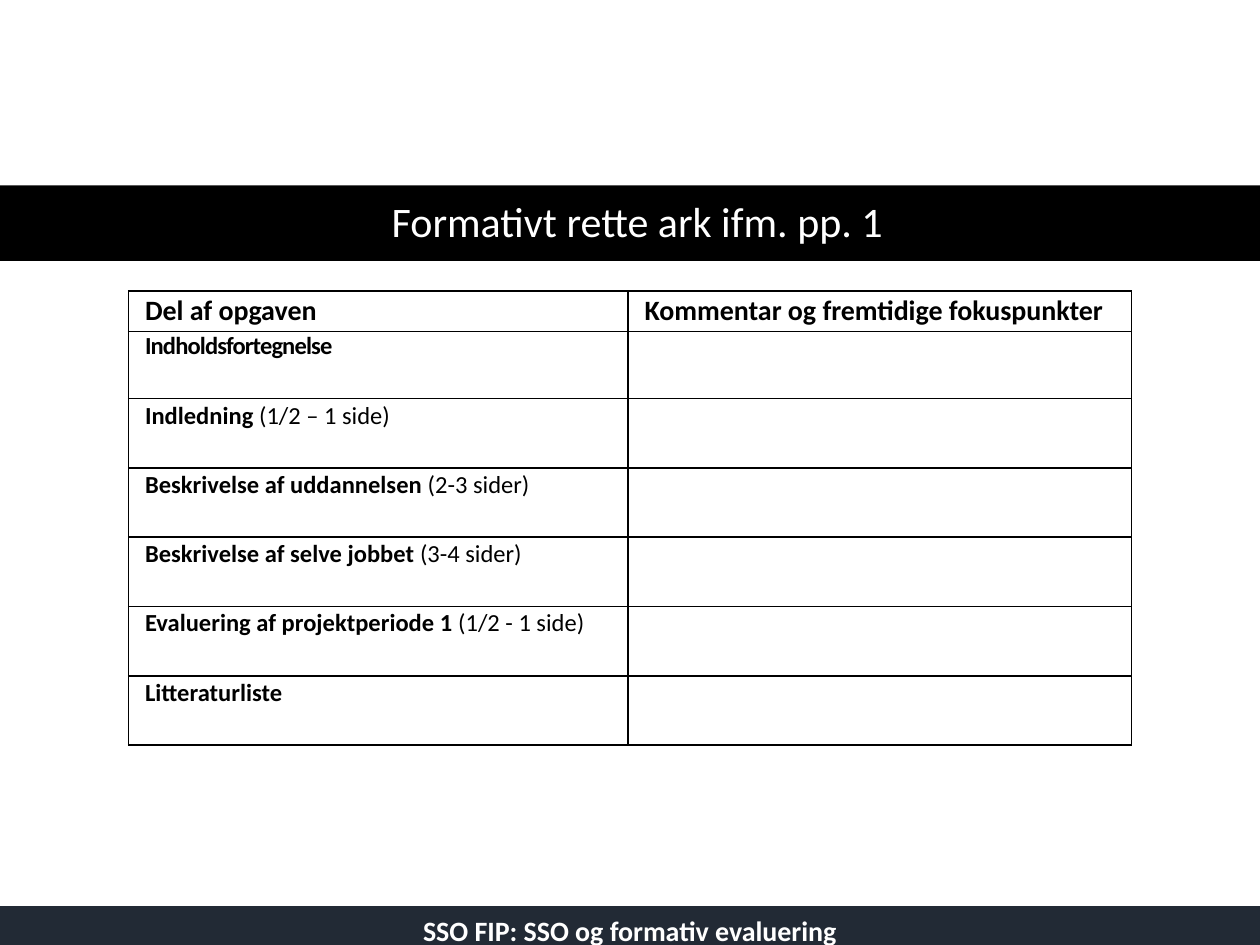
import pptx
import pptx.dml.color
import pptx.enum.shapes
import pptx.enum.text
import pptx.oxml
import pptx.oxml.ns
import pptx.util

Pt = pptx.util.Pt
RGBColor = pptx.dml.color.RGBColor
ALIGN = pptx.enum.text.PP_ALIGN
MIDDLE = pptx.enum.text.MSO_ANCHOR.MIDDLE

BLACK = RGBColor(0x00, 0x00, 0x00)
WHITE = RGBColor(0xFF, 0xFF, 0xFF)
NAVY = RGBColor(0x22, 0x2A, 0x35)

HEADINGS = ["Del af opgaven", "Kommentar og fremtidige fokuspunkter"]
# Part of the assignment, expected length, letter spacing in points
PARTS = [
    ("Indholdsfortegnelse", "", -0.5),
    ("Indledning", " (1/2 – 1 side)", 0),
    ("Beskrivelse af uddannelsen", " (2-3 sider)", 0),
    ("Beskrivelse af selve jobbet", " (3-4 sider)", 0),
    ("Evaluering af projektperiode 1", " (1/2 - 1 side)", 0),
    ("Litteraturliste", "", 0),
]
COLUMN_WIDTHS = [285.5, 287.5]
ROW_HEIGHTS = [23, 38.5] + [39.6] * 5


class SlideBuilder:
    """Holds the page and the text style shared by its elements."""

    font = "Calibri"

    def __init__(self, page):
        self.page = page

    def span(self, para, text, size, color=BLACK, bold=False, spacing=0):
        run = para.add_run()
        run.text = text
        run.font.name = self.font
        run.font.size = Pt(size)
        run.font.bold = bold
        run.font.color.rgb = color
        if spacing:
            run.font._element.set("spc", str(round(spacing * 100)))

    def bar(self, top, height, color):
        shape = self.page.shapes.add_shape(
            pptx.enum.shapes.MSO_SHAPE.RECTANGLE, 0, Pt(top), Pt(720), Pt(height))
        shape.shadow.inherit = False
        shape.fill.solid()
        shape.fill.fore_color.rgb = color
        shape.line.fill.background()
        return shape

    def title(self, text, left, top, width, height):
        title = self.page.shapes.title
        title.left, title.top = Pt(left), Pt(top)
        title.width, title.height = Pt(width), Pt(height)
        self.page.shapes._spTree.append(title._element)  # in front of its bar
        frame = title.text_frame
        frame.auto_size = pptx.enum.text.MSO_AUTO_SIZE.NONE
        frame.vertical_anchor = MIDDLE
        frame.margin_left = frame.margin_right = Pt(5)
        frame.margin_top = frame.margin_bottom = Pt(3)
        para = frame.paragraphs[0]
        para.alignment = ALIGN.CENTER
        para.line_spacing = 0.9
        self.span(para, text, 24, WHITE)

    def footer(self, text, top, height):
        shape = self.bar(top, height, NAVY)
        shape.line.color.rgb = NAVY
        shape.line.width = Pt(1)
        shape.text_frame.vertical_anchor = MIDDLE
        para = shape.text_frame.paragraphs[0]
        para.alignment = ALIGN.CENTER
        self.span(para, text, 16, WHITE, bold=True)

    def border(self, cell):
        properties = cell._tc.get_or_add_tcPr()
        for side in ("lnL", "lnR", "lnT", "lnB"):
            properties.append(pptx.oxml.parse_xml(
                f'<a:{side} {pptx.oxml.ns.nsdecls("a")} w="{Pt(1)}"><a:solidFill>'
                f'<a:srgbClr val="{BLACK}"/></a:solidFill></a:{side}>'))

    def table(self, left, top):
        table = self.page.shapes.add_table(
            len(ROW_HEIGHTS), len(COLUMN_WIDTHS), Pt(left), Pt(top),
            Pt(sum(COLUMN_WIDTHS)), Pt(sum(ROW_HEIGHTS))).table
        table.first_row = table.horz_banding = False
        for column, width in zip(table.columns, COLUMN_WIDTHS):
            column.width = Pt(width)
        for row, height in zip(table.rows, ROW_HEIGHTS):
            row.height = Pt(height)
        for cell in table.iter_cells():
            self.border(cell)
            cell.fill.background()
            cell.margin_left = cell.margin_right = Pt(9.4)
            cell.margin_top = cell.margin_bottom = 0
        for column, heading in enumerate(HEADINGS):
            para = table.cell(0, column).text_frame.paragraphs[0]
            para.line_spacing = 1.07
            self.span(para, heading, 16, bold=True)
        for row, (part, length, spacing) in enumerate(PARTS, start=1):
            para = table.cell(row, 0).text_frame.paragraphs[0]
            para.line_spacing = 1 if spacing else 1.07
            self.span(para, part, 14, bold=True, spacing=spacing)
            if length:
                self.span(para, length, 14)


def main():
    deck = pptx.Presentation()
    deck.slide_width, deck.slide_height = Pt(720), Pt(540)
    builder = SlideBuilder(deck.slides.add_slide(deck.slide_layouts[5]))
    builder.bar(106, 43.2, BLACK)
    builder.title("Formativt rette ark ifm. pp. 1", 33, 106, 662.4, 44)
    builder.table(73.5, 166.3)
    builder.footer("SSO FIP: SSO og formativ evaluering", 518.4, 26)
    deck.save("out.pptx")


if __name__ == "__main__":
    main()
